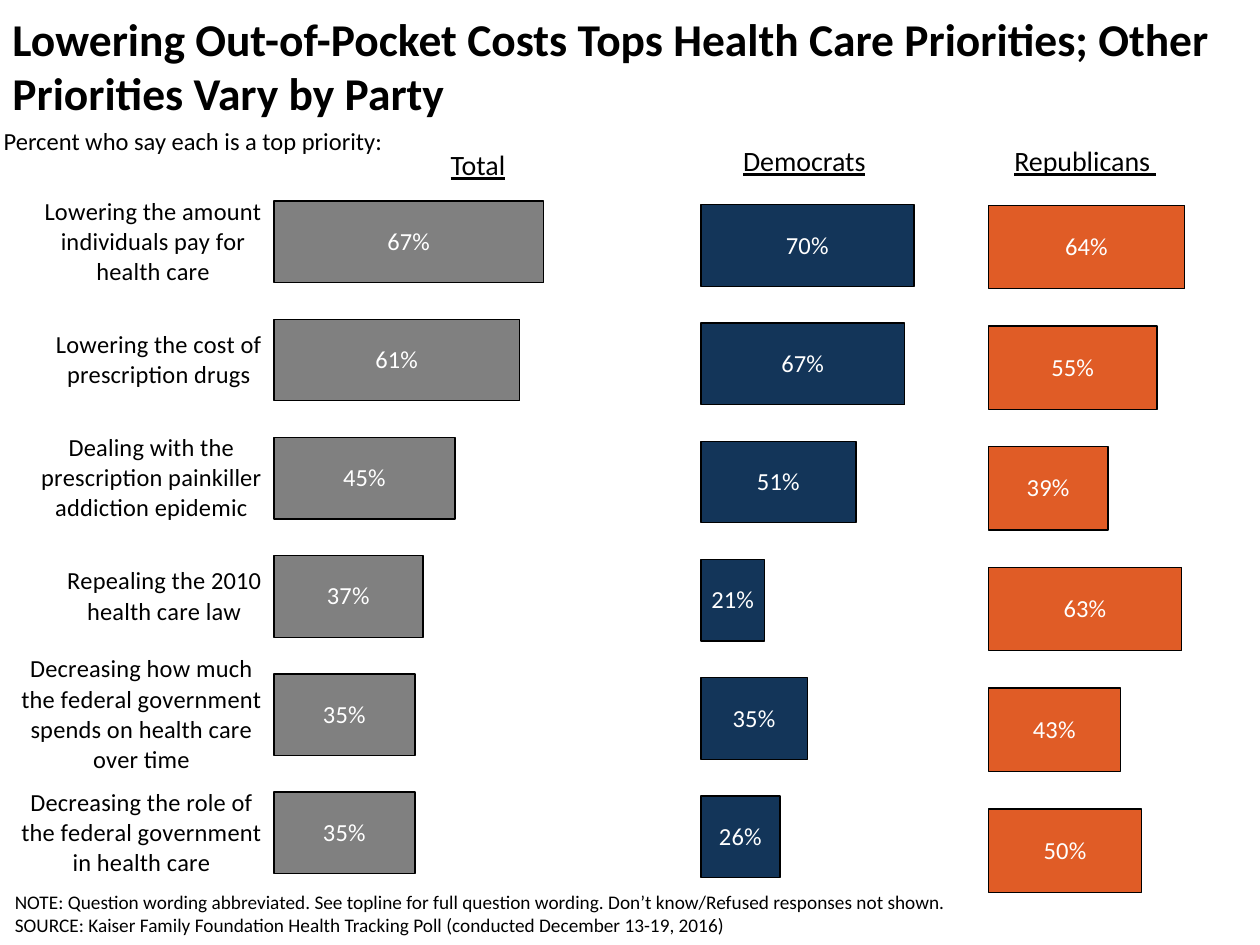
from dataclasses import dataclass

from lxml.etree import SubElement
from pptx import Presentation
from pptx.chart.data import CategoryChartData
from pptx.dml.color import RGBColor
from pptx.enum.chart import XL_CHART_TYPE, XL_TICK_MARK
from pptx.enum.text import MSO_ANCHOR, PP_ALIGN
from pptx.oxml.ns import qn
from pptx.slide import Slide
from pptx.util import Pt

FONT = "Calibri"
COLORS = {
    "text": "000000",
    "label": "FFFFFF",
    "total": "808080",
    "democrats": "133559",
    "republicans": "E05C26",
}
PRIORITIES = [
    "Lowering the amount individuals pay for health care",
    "Lowering the cost of prescription drugs",
    "Dealing with the prescription painkiller addiction epidemic",
    "Repealing the 2010 health care law",
    "Decreasing how much the federal government spends on health care over time",
    "Decreasing the role of the federal government in health care",
]


@dataclass
class Box:
    left: float
    top: float
    width: float
    height: float

    def lengths(self) -> list[Pt]:
        return [Pt(value) for value in (self.left, self.top, self.width, self.height)]


@dataclass
class Text:
    box: Box
    lines: list[str]
    size: float
    bold: bool = False
    underline: bool = False
    align: PP_ALIGN = PP_ALIGN.LEFT
    anchor: MSO_ANCHOR = MSO_ANCHOR.TOP


@dataclass
class PartyChart:
    name: str
    color: str
    box: Box
    plot_left: float  # share of the chart width
    values: list[float]
    plot_width: float = 0.617
    show_categories: bool = False


def rgb(name: str) -> RGBColor:
    return RGBColor.from_string(COLORS[name])


def add_text(slide: Slide, text: Text) -> None:
    frame = slide.shapes.add_textbox(*text.box.lengths()).text_frame
    frame.word_wrap = True
    frame.vertical_anchor = text.anchor
    for index, line in enumerate(text.lines):
        paragraph = frame.add_paragraph() if index else frame.paragraphs[0]
        paragraph.alignment = text.align
        run = paragraph.add_run()
        run.text = line
        run.font.name = FONT
        run.font.size = Pt(text.size)
        run.font.bold = text.bold
        run.font.underline = text.underline
        run.font.color.rgb = rgb("text")


def set_plot_area(chart, left: float, width: float) -> None:
    """Fix the inner plot area, as shares of the chart frame."""
    plot_area = chart.element.find(f".//{qn('c:plotArea')}")
    for old_layout in plot_area.findall(qn("c:layout")):
        plot_area.remove(old_layout)
    layout = SubElement(plot_area, qn("c:layout"))
    plot_area.insert(0, layout)
    manual = SubElement(layout, qn("c:manualLayout"))
    settings = {"layoutTarget": "inner", "xMode": "edge", "yMode": "edge",
                "x": left, "y": 0, "w": width, "h": 1}
    for tag, value in settings.items():
        SubElement(manual, qn(f"c:{tag}")).set("val", str(value))


def add_party_chart(slide: Slide, party: PartyChart) -> None:
    data = CategoryChartData(number_format="0%")
    data.categories = PRIORITIES
    data.add_series(party.name, party.values)
    chart = slide.shapes.add_chart(
        XL_CHART_TYPE.BAR_STACKED, *party.box.lengths(), data
    ).chart
    chart.has_legend = False
    chart.has_title = False
    chart.font.name = FONT
    chart.font.size = Pt(13)
    chart.font.color.rgb = rgb("text")
    set_plot_area(chart, party.plot_left, party.plot_width)

    # Axes
    value_axis = chart.value_axis
    value_axis.minimum_scale = 0
    value_axis.maximum_scale = 1.05
    value_axis.has_major_gridlines = False
    value_axis.visible = False
    category_axis = chart.category_axis
    category_axis.reverse_order = True
    category_axis.visible = party.show_categories
    if party.show_categories:
        category_axis.major_tick_mark = XL_TICK_MARK.OUTSIDE
        category_axis.format.line.fill.background()
        category_axis.tick_labels.font.size = Pt(14)

    # Bars and their labels
    plot = chart.plots[0]
    plot.gap_width = 45
    plot.overlap = 100
    plot.vary_by_categories = False
    bars = plot.series[0]
    bars.format.fill.solid()
    bars.format.fill.fore_color.rgb = rgb(party.color)
    bars.format.line.color.rgb = rgb("text")
    bars.format.line.width = Pt(0.75)
    labels = bars.data_labels
    labels.show_value = True
    labels.number_format = "0%"
    labels.number_format_is_linked = False
    labels.font.name = FONT
    labels.font.size = Pt(14)
    labels.font.color.rgb = rgb("label")


def column_heading(name: str, left: float, top: float) -> Text:
    return Text(Box(left, top, 156, 26.6), [name], 16,
                underline=True, align=PP_ALIGN.CENTER)


CHARTS = [
    PartyChart("Total", "total", Box(12.2, 104.4, 393.1, 405.4), 0.365,
               [0.67, 0.61, 0.45, 0.37, 0.35, 0.35], show_categories=True),
    PartyChart("Democrats", "democrats", Box(396.7, 106.6, 295.9, 405.4), 0.013,
               [0.70, 0.67, 0.51, 0.21, 0.35, 0.26]),
    PartyChart("Republicans", "republicans", Box(450.7, 106.6, 298.1, 414), 0.527,
               [0.64, 0.55, 0.39, 0.63, 0.43, 0.50]),
]
TEXTS = [
    Text(Box(0, 1.4, 714.2, 72),
         ["Lowering Out-of-Pocket Costs Tops Health Care Priorities; "
          "Other Priorities Vary by Party"],
         26, bold=True, anchor=MSO_ANCHOR.MIDDLE),
    Text(Box(-5, 68.4, 704.2, 24.5), ["Percent who say each is a top priority:"], 14),
    column_heading("Total", 195.1, 80.6),
    column_heading("Democrats", 381.6, 78.5),
    column_heading("Republicans ", 542.2, 78.5),
    Text(Box(1.4, 495.4, 655.2, 43.2),
         ["NOTE: Question wording abbreviated. See topline for full question wording. "
          "Don’t know/Refused responses not shown.",
          "SOURCE: Kaiser Family Foundation Health Tracking Poll "
          "(conducted December 13-19, 2016)"],
         11, anchor=MSO_ANCHOR.BOTTOM),
]


def main() -> None:
    presentation = Presentation()
    presentation.slide_width = Pt(720)
    presentation.slide_height = Pt(540)
    slide = presentation.slides.add_slide(presentation.slide_layouts[6])
    for party in CHARTS:
        add_party_chart(slide, party)
    for text in TEXTS:
        add_text(slide, text)
    presentation.save("out.pptx")


if __name__ == "__main__":
    main()
